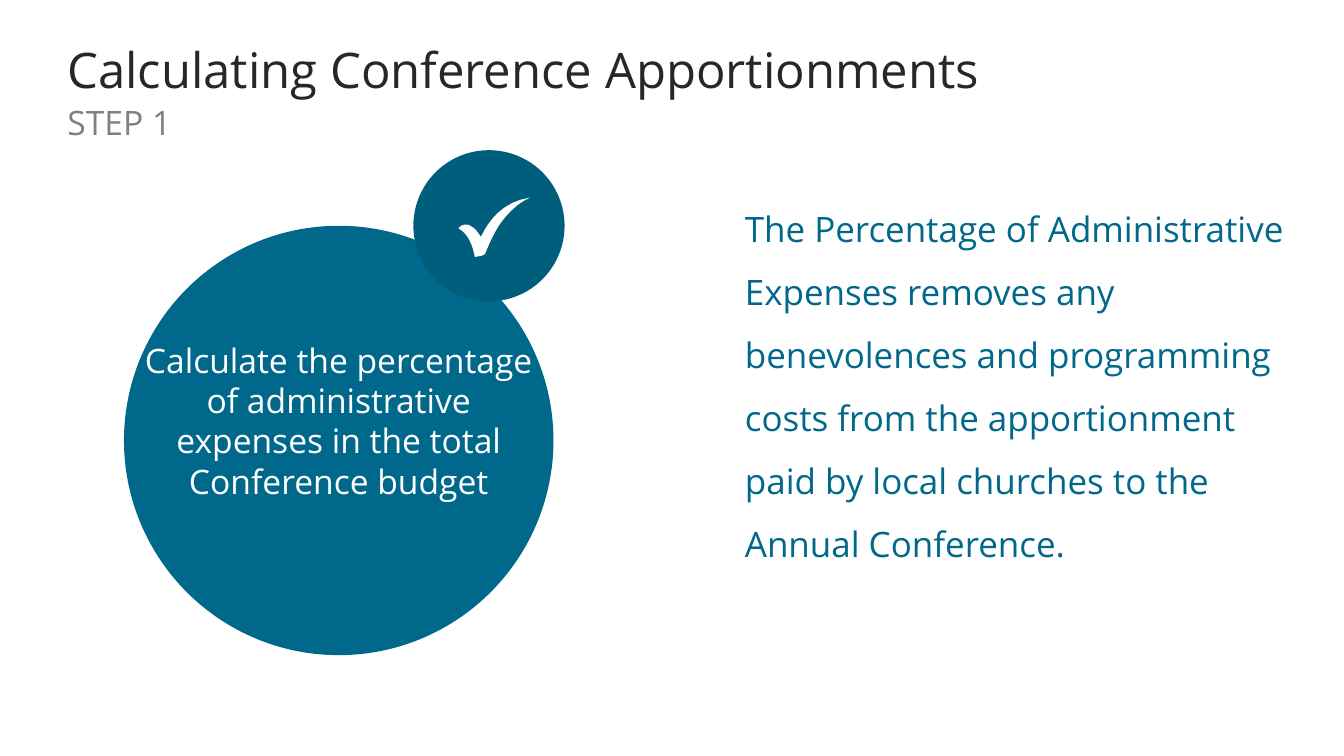
from dataclasses import dataclass

from pptx import Presentation
from pptx.dml.color import RGBColor
from pptx.enum.shapes import MSO_SHAPE
from pptx.enum.text import MSO_ANCHOR, PP_ALIGN
from pptx.util import Inches, Pt

OVAL = MSO_SHAPE.OVAL
CENTER = PP_ALIGN.CENTER
TOP, MIDDLE = MSO_ANCHOR.TOP, MSO_ANCHOR.MIDDLE


@dataclass(frozen=True)
class Theme:
    """Colours, font and type sizes of the slide."""
    font: str = "Open Sans"
    teal: str = "00688B"
    deep: str = "005E7D"
    white: str = "FFFFFF"
    ink: str = "282725"
    gray: str = "808080"
    title: int = 35
    body: int = 25
    label: int = 24


THEME = Theme()

TICK = [
    [(4.55, 2.26), (4.58, 2.23), (4.63, 2.21), (4.68, 2.25)],
    [(4.68, 2.25), (4.72, 2.27), (4.74, 2.31), (4.77, 2.35)],
    [(4.77, 2.35), (4.84, 2.2), (4.98, 2.0), (5.26, 1.96)],
    [(5.26, 1.96), (5.14, 2.01), (5.04, 2.11), (4.96, 2.22)],
    [(4.96, 2.22), (4.9, 2.31), (4.85, 2.42), (4.81, 2.52)],
    [(4.81, 2.52), (4.79, 2.54), (4.75, 2.54), (4.71, 2.55)],
    [(4.71, 2.55), (4.69, 2.44), (4.64, 2.31), (4.55, 2.27)],
]


def assign(item, values):
    """Set each attribute named in a dict."""
    for name, value in values.items():
        setattr(item, name, value)


def add_text(slide, box, text, size, color, anchor=TOP, **para):
    """Add a wrapped text box with one paragraph."""
    frame = slide.shapes.add_textbox(*map(Inches, box)).text_frame
    assign(frame, {"word_wrap": True, "vertical_anchor": anchor})
    line = frame.paragraphs[0]
    assign(line, para)
    run = line.add_run()
    run.text = text
    assign(run.font, {"name": THEME.font, "size": Pt(size)})
    run.font.color.rgb = RGBColor.from_string(color)


def paint(shape, color):
    """Give a shape a plain fill with no line or shadow."""
    shape.shadow.inherit = False
    shape.fill.solid()
    shape.fill.fore_color.rgb = RGBColor.from_string(color)
    shape.line.fill.background()


def add_disc(slide, left, top, size, color):
    """Add a filled circle."""
    box = map(Inches, (left, top, size, size))
    paint(slide.shapes.add_shape(OVAL, *box), color)


def trace(curve, steps=8):
    """Return points along a cubic curve, without its start."""
    points = []
    for step in range(1, steps + 1):
        t = step / steps
        u = 1 - t
        parts = (u ** 3, 3 * u * u * t, 3 * u * t * t, t ** 3)
        points.append(tuple(
            Inches(sum(p * v for p, v in zip(parts, axis)))
            for axis in zip(*curve)))
    return points


def add_tick(slide, curves, color):
    """Add a check mark outlined by joined curves."""
    start = map(Inches, curves[0][0])
    pen = slide.shapes.build_freeform(*start)
    pen.add_line_segments([spot for curve in curves for spot in trace(curve)])
    paint(pen.convert_to_shape(), color)


def main():
    """Build and save the slide."""
    deck = Presentation()
    assign(deck, {"slide_width": Inches(13.33), "slide_height": Inches(7.5)})
    slide = deck.slides.add_slide(deck.slide_layouts[6])
    add_text(slide, (7.29, 1.8, 5.76, 4.45),
             "The Percentage of Administrative Expenses removes any "
             "benevolences and programming costs from the apportionment "
             "paid by local churches to the Annual Conference.",
             THEME.body, THEME.teal, line_spacing=1.5)
    add_disc(slide, 1.23, 2.24, 4.26, THEME.teal)
    add_disc(slide, 4.1, 1.49, 1.5, THEME.deep)
    add_text(slide, (1.23, 3.32, 4.26, 1.72),
             "Calculate the percentage of administrative expenses "
             "in the total Conference budget",
             THEME.label, THEME.white, alignment=CENTER)
    add_tick(slide, TICK, THEME.white)
    add_text(slide, (0.57, 0.39, 11.5, 0.66),
             "Calculating Conference Apportionments",
             THEME.title, THEME.ink, MIDDLE, line_spacing=0.9)
    add_text(slide, (0.57, 0.96, 11.69, 0.5), "STEP 1",
             THEME.label, THEME.gray)
    deck.save("out.pptx")


if __name__ == "__main__":
    main()
